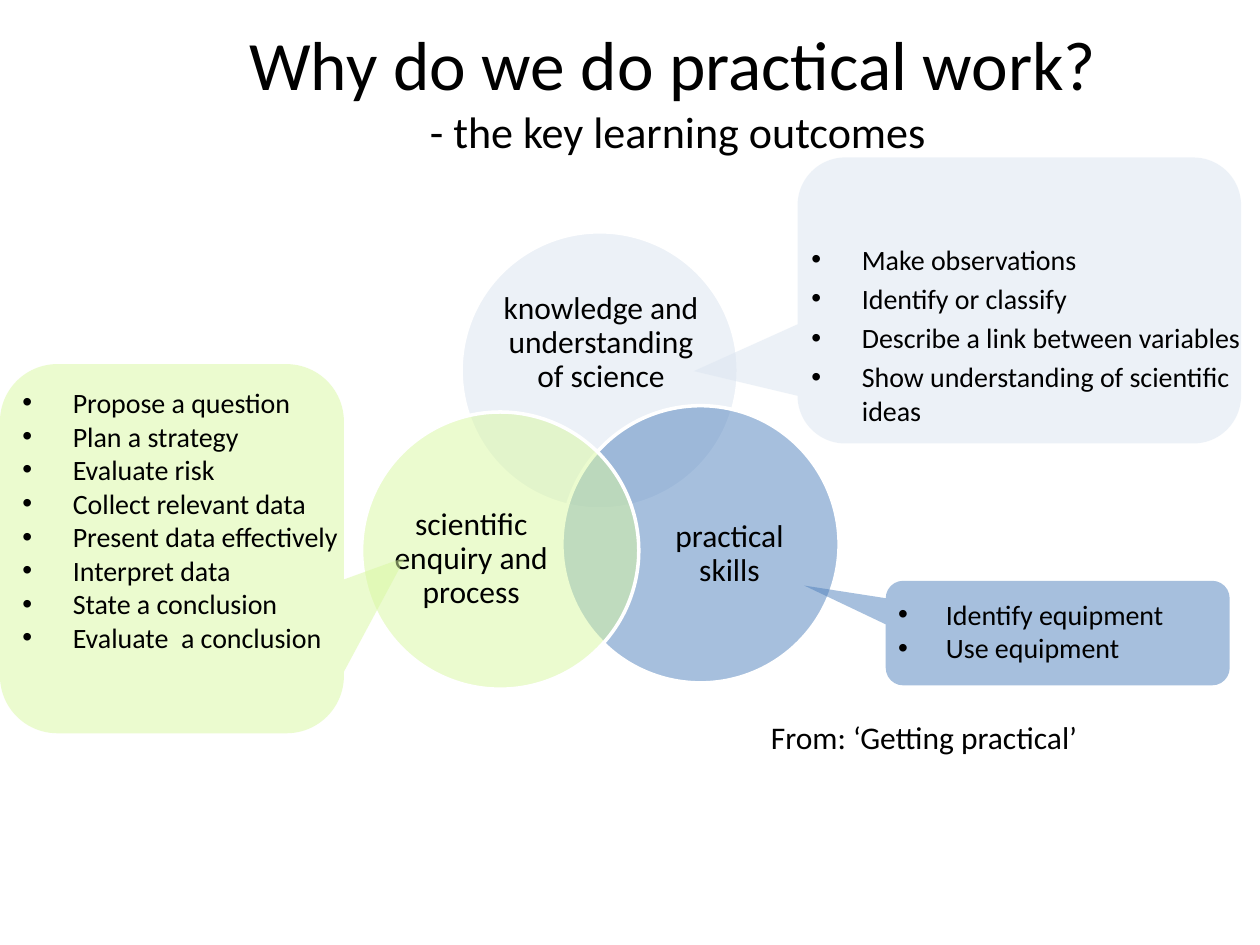
from dataclasses import dataclass

from lxml.etree import SubElement
from pptx import Presentation
from pptx.dml.color import RGBColor
from pptx.enum.shapes import MSO_SHAPE
from pptx.enum.text import MSO_ANCHOR, MSO_AUTO_SIZE, PP_ALIGN
from pptx.oxml.ns import qn
from pptx.util import Inches, Pt


@dataclass(frozen=True)
class Theme:
    font: str = "Calibri"
    ink: str = "000000"
    outline: str = "FFFFFF"
    knowledge: str = "DBE5F1"
    skills: str = "4F81BD"
    enquiry: str = "D9F8A0"
    title: float = 39.6
    subtitle: float = 25.2
    label: float = 18
    item: float = 16


def add_span(para, text, *, size, color=Theme.ink, font=Theme.font):
    span = para.add_run()
    span.text = text
    span.font.size = Pt(size)
    span.font.name = font
    span.font.color.rgb = RGBColor.from_string(color)


def add_bullet(para, indent, color):
    properties = para._p.get_or_add_pPr()
    properties.set("marL", str(Inches(indent)))
    properties.set("indent", str(-Inches(indent)))
    bullet_color = SubElement(properties, qn("a:buClr"))
    SubElement(bullet_color, qn("a:srgbClr"), val=color)
    SubElement(properties, qn("a:buFont"), typeface="Arial")
    SubElement(properties, qn("a:buChar"), char="•")


class Slide:
    """Places elements on a grid of 100 columns by 75 rows."""

    COLUMNS, ROWS = 100, 75

    def __init__(self, deck, theme):
        self.deck, self.theme = deck, theme
        self.page = deck.slides.add_slide(deck.slide_layouts[1])

    def cells(self, left, top, width, height):
        column = self.deck.slide_width / self.COLUMNS
        row = self.deck.slide_height / self.ROWS
        return [round(n * unit) for n, unit in
                zip((left, top, width, height), (column, row, column, row))]

    def place(self, box, area, anchor):
        box.left, box.top, box.width, box.height = self.cells(*area)
        frame = box.text_frame
        frame.word_wrap = True
        frame.auto_size = MSO_AUTO_SIZE.NONE
        frame.vertical_anchor = anchor
        return frame

    def title(self, area, heading, subheading):
        frame = self.place(self.page.shapes.title, area, MSO_ANCHOR.MIDDLE)
        para = frame.paragraphs[0]
        para.alignment = PP_ALIGN.CENTER
        add_span(para, heading, size=self.theme.title)
        para.add_line_break()
        add_span(para, subheading, size=self.theme.subtitle)

    def tinted(self, shapes, kind, area, color):
        """Adds a half-transparent shape without an outline."""
        shape = shapes.add_shape(kind, *self.cells(*area))
        shape.shadow.inherit = False
        shape.fill.solid()
        shape.fill.fore_color.rgb = RGBColor.from_string(color)
        fill_color = shape._element.spPr.find(f"{qn('a:solidFill')}/{qn('a:srgbClr')}")
        SubElement(fill_color, qn("a:alpha"), val="50000")
        shape.line.fill.background()
        return shape

    def venn(self, diameter, circles):
        group = self.page.shapes.add_group_shape()
        for left, top, color, text, text_area in circles:
            circle = self.tinted(group.shapes, MSO_SHAPE.OVAL,
                                 (left, top, diameter, diameter), color)
            circle.line.color.rgb = RGBColor.from_string(self.theme.outline)
            circle.line.width = Pt(2)
            self.text(text_area, text, shapes=group.shapes, inset=0, line_spacing=0.9,
                      align=PP_ALIGN.CENTER, anchor=MSO_ANCHOR.MIDDLE)

    def text(self, area, text, *, shapes=None, inset=None, line_spacing=None,
             align=PP_ALIGN.LEFT, anchor=MSO_ANCHOR.TOP):
        box = (shapes or self.page.shapes).add_textbox(*self.cells(*area))
        frame = self.place(box, area, anchor)
        if inset is not None:
            frame.margin_left = frame.margin_right = Inches(inset)
            frame.margin_top = frame.margin_bottom = Inches(inset)
        para = frame.paragraphs[0]
        para.alignment = align
        para.line_spacing = line_spacing
        add_span(para, text, size=self.theme.label)

    def callout(self, area, tip, color):
        """Adds a speech bubble; tip is its offset from the centre in shares of its size."""
        bubble = self.tinted(self.page.shapes, MSO_SHAPE.ROUNDED_RECTANGULAR_CALLOUT,
                             area, color)
        for index, share in enumerate((*tip, 0.167)):
            bubble.adjustments[index] = share

    def bullets(self, area, items, *, box=None, indent=0.4, gap=0, anchor=MSO_ANCHOR.TOP):
        box = box or self.page.shapes.add_textbox(*self.cells(*area))
        self.page.shapes._spTree.append(box._element)  # in front of its bubble
        frame = self.place(box, area, anchor)
        for index, item in enumerate(items):
            para = frame.add_paragraph() if index else frame.paragraphs[0]
            add_bullet(para, indent, self.theme.ink)
            para.space_before = Pt(gap if index else 0)
            add_span(para, item, size=self.theme.item)


def main():
    deck = Presentation()
    deck.slide_width, deck.slide_height = Inches(10), Inches(7.5)
    theme = Theme()
    slide = Slide(deck, theme)

    slide.title((8.4, 0.8, 90, 12.5), "Why do we do practical work?",
                " - the key learning outcomes")
    slide.venn(22, [
        (36.6, 18.4, theme.knowledge, "knowledge and understanding of science",
         (39.6, 22.3, 16.2, 9.9)),
        (44.6, 32.2, theme.skills, "practical skills", (51.3, 37.9, 13.2, 12.1)),
        (28.7, 32.7, theme.enquiry, "scientific enquiry and process",
         (30.8, 38.3, 13.2, 12.1)),
    ])

    slide.callout((70.3, 46.1, 27.3, 8.3), (-0.737, -0.454), theme.skills)
    slide.bullets((70.3, 46.9, 29.7, 6.4), ["Identify equipment", "Use equipment"],
                  indent=0.38)

    slide.callout((63.3, 12.5, 35.2, 22.7), (-0.734, 0.247), theme.knowledge)
    slide.bullets((63.4, 11.7, 36.6, 22.7), [
        "Make observations",
        "Identify or classify",
        "Describe a link between variables",
        "Show understanding of scientific ideas",
    ], box=slide.page.placeholders[1], gap=0.2 * theme.item, anchor=MSO_ANCHOR.BOTTOM)

    slide.callout((0, 28.9, 27.3, 29.3), (0.679, 0.023), theme.enquiry)
    slide.bullets((0.8, 30.1, 27.3, 27.9), [
        "Propose a question",
        "Plan a strategy",
        "Evaluate risk",
        "Collect relevant data",
        "Present data effectively",
        "Interpret data",
        "State a conclusion",
        "Evaluate  a conclusion",
    ])

    slide.text((60.2, 56.5, 34.7, 4), "From: ‘Getting practical’")
    deck.save("out.pptx")


if __name__ == "__main__":
    main()
